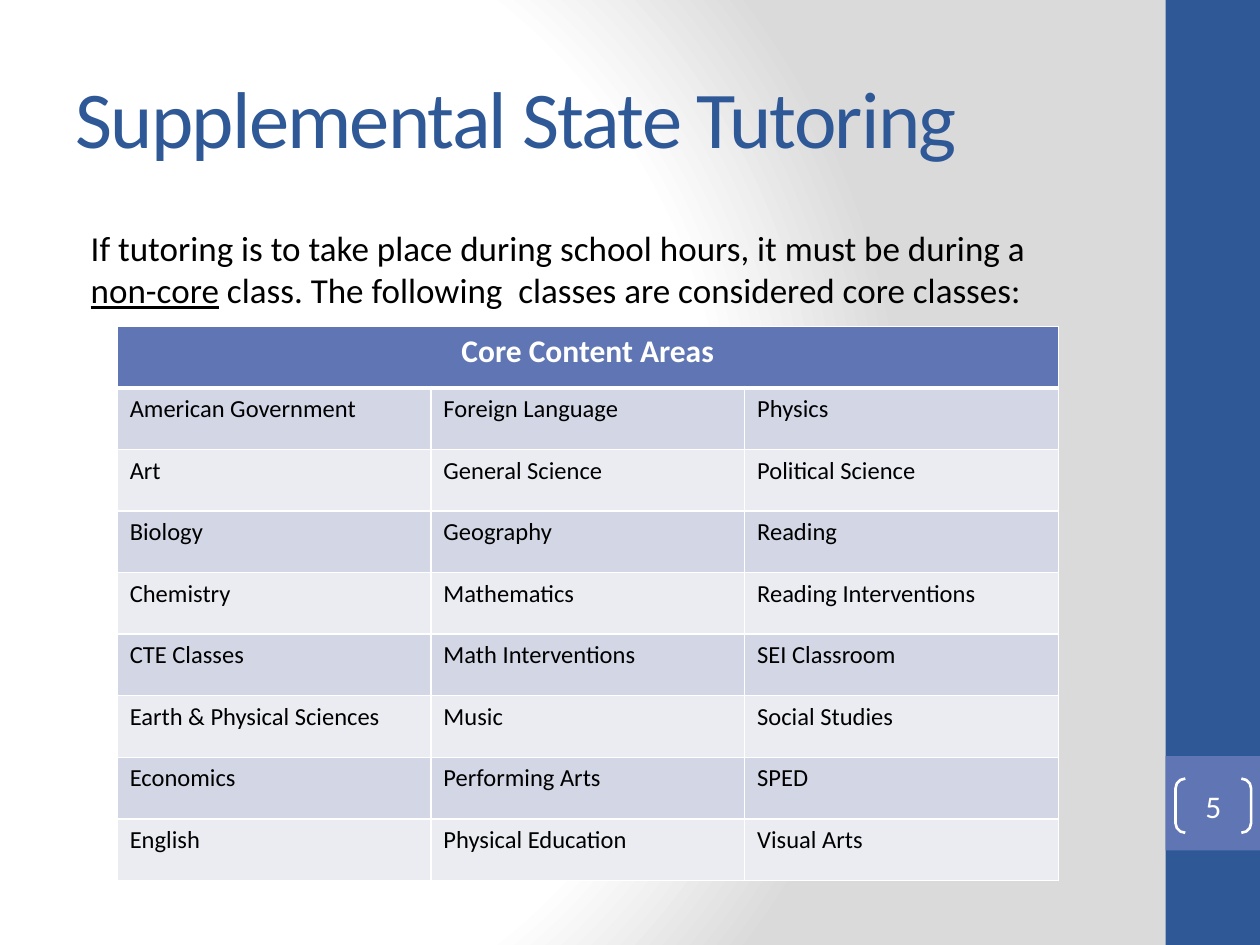
import pptx
import pptx.dml.color
import pptx.enum.shapes
import pptx.enum.text
import pptx.oxml
import pptx.oxml.ns
import pptx.util

COLORS = {"blue": "2F5897", "accent": "6076B4", "white": "FFFFFF", "gray": "DADADA",
          "black": "000000", "odd": "D2D6E5", "even": "EAECF2"}
WIDTH, HEIGHT = 10, 7.5
SIDEBAR = 0.75
FORMATS = {
    "title": {"size": pptx.util.Pt(46), "color": "blue"},
    "body": {"size": pptx.util.Pt(20), "color": "black"},
    "number": {"size": pptx.util.Pt(18), "color": "white"},
    "header": {"size": pptx.util.Pt(18), "color": "white", "bold": True},
    "cell": {"size": pptx.util.Pt(14), "color": "black", "bold": False},
}
HEADER = "Core Content Areas"
CLASSES = [
    ("American Government", "Foreign Language", "Physics"),
    ("Art", "General Science", "Political Science"),
    ("Biology", "Geography", "Reading"),
    ("Chemistry", "Mathematics", "Reading Interventions"),
    ("CTE Classes", "Math Interventions", "SEI Classroom"),
    ("Earth & Physical Sciences", "Music", "Social Studies"),
    ("Economics", "Performing Arts", "SPED"),
    ("English", "Physical Education", "Visual Arts"),
]
ALIGN = pptx.enum.text.PP_ALIGN
ANCHOR = pptx.enum.text.MSO_ANCHOR
SHAPES = pptx.enum.shapes.MSO_SHAPE


def rgb(name):
    """Return the named colour."""
    return pptx.dml.color.RGBColor.from_string(COLORS[name])


def box(*lengths):
    """Convert inches to slide lengths."""
    return [pptx.util.Inches(length) for length in lengths]


def xml(tag, content="", attributes=""):
    """Build one DrawingML element."""
    namespace = pptx.oxml.ns.nsdecls("a")
    return pptx.oxml.parse_xml(f"<a:{tag} {namespace} {attributes}>{content}</a:{tag}>")


def solid(name):
    """Return the colour markup for a named colour."""
    return f'<a:srgbClr val="{COLORS[name]}"/>'


def add_run(paragraph, text, style, **extra):
    """Add a run of text in one of the formats."""
    run = paragraph.add_run()
    run.text = text
    values = {"name": "Calibri", **FORMATS[style], **extra}
    run.font.color.rgb = rgb(values.pop("color"))
    for name, value in values.items():
        setattr(run.font, name, value)


def place(shape, *lengths):
    """Move and size a placeholder."""
    for name, value in zip(("left", "top", "width", "height"), box(*lengths)):
        setattr(shape, name, value)
    shape.text_frame.auto_size = pptx.enum.text.MSO_AUTO_SIZE.NONE


def set_background(slide):
    """Fill the background with a circular gradient."""
    slide.background.fill.gradient()
    gradient = slide.element.find(".//" + pptx.oxml.ns.qn("a:gradFill"))
    for child in list(gradient):
        gradient.remove(child)
    stops = ((0, "white"), (75, "white"), (100, "gray"))
    gradient.append(xml("gsLst", "".join(
        f'<a:gs pos="{share * 1000}">{solid(name)}</a:gs>' for share, name in stops)))
    gradient.append(xml("path", '<a:fillToRect l="20000" t="50000" r="100000" b="50000"/>',
                        'path="circle"'))


def add_block(slide, color, top, height):
    """Add a filled block in the sidebar."""
    block = slide.shapes.add_shape(SHAPES.RECTANGLE,
                                   *box(WIDTH - SIDEBAR, top, SIDEBAR, height))
    block.shadow.inherit = False
    block.fill.solid()
    block.fill.fore_color.rgb = rgb(color)
    block.line.fill.background()


def add_number(slide, text):
    """Add the bracketed slide number."""
    shape = slide.shapes.add_shape(SHAPES.DOUBLE_BRACKET, *box(9.33, 6.18, 0.6, 0.43))
    shape.adjustments[0] = 0.18
    shape.shadow.inherit = False
    shape.fill.background()
    shape.line.color.rgb = rgb("white")
    shape.line.width = pptx.util.Pt(1.5)
    frame = shape.text_frame
    for side in ("left", "top", "right", "bottom"):
        setattr(frame, f"margin_{side}", 0)
    frame.vertical_anchor = ANCHOR.MIDDLE
    frame.paragraphs[0].alignment = ALIGN.CENTER
    add_run(frame.paragraphs[0], text, "number")


def add_title(slide, text):
    """Write the title."""
    title = slide.shapes.title
    place(title, 0.5, 0.3, 8.33, 1.25)
    title.text_frame.vertical_anchor = ANCHOR.MIDDLE
    paragraph = title.text_frame.paragraphs[0]
    paragraph.alignment = ALIGN.LEFT
    add_run(paragraph, text, "title")
    title.element.find(".//" + pptx.oxml.ns.qn("a:rPr")).set("spc", "-100")


def add_body(slide, before, underlined, after):
    """Write the introduction with one underlined term."""
    body = slide.placeholders[1]
    place(body, 0.5, 1.75, 7.9, 4.86)
    paragraph = body.text_frame.paragraphs[0]
    paragraph.space_before = pptx.util.Pt(0)
    properties = body.element.find(".//" + pptx.oxml.ns.qn("a:pPr"))
    properties.set("marL", str(pptx.util.Inches(0.12)))
    properties.set("indent", "0")
    properties.append(xml("buNone"))
    add_run(paragraph, before, "body")
    add_run(paragraph, underlined, "body", underline=True)
    add_run(paragraph, after, "body")


def format_cell(cell, fill, bottom=1):
    """Give a cell white borders and a fill."""
    properties = cell._tc.get_or_add_tcPr()
    for side, width in zip("LRTB", (1, 1, 1, bottom)):
        properties.append(xml(f"ln{side}", f"<a:solidFill>{solid('white')}</a:solidFill>",
                              f'w="{pptx.util.Pt(width)}"'))
    cell.fill.solid()
    cell.fill.fore_color.rgb = rgb(fill)


def add_class_table(slide):
    """Add the table of core classes under a merged header."""
    rows, columns = len(CLASSES) + 1, len(CLASSES[0])
    table = slide.shapes.add_table(rows, columns, *box(0.93, 2.59, 7.47, 4.4)).table
    for column in range(columns):
        format_cell(table.cell(0, column), "accent", 3)
    header = table.cell(0, 0)
    header.merge(table.cell(0, columns - 1))
    paragraph = header.text_frame.paragraphs[0]
    paragraph.alignment = ALIGN.CENTER
    add_run(paragraph, HEADER, "header")
    for row, names in enumerate(CLASSES, 1):
        for column, name in enumerate(names):
            cell = table.cell(row, column)
            format_cell(cell, "odd" if row % 2 else "even")
            add_run(cell.text_frame.paragraphs[0], name, "cell")


def main():
    """Build and save the slide."""
    presentation = pptx.Presentation()
    presentation.slide_width, presentation.slide_height = box(WIDTH, HEIGHT)
    slide = presentation.slides.add_slide(presentation.slide_layouts[1])
    set_background(slide)
    add_block(slide, "blue", 0, HEIGHT)
    add_block(slide, "accent", HEIGHT * 0.8, SIDEBAR)
    add_title(slide, "Supplemental State Tutoring")
    add_body(slide, "If tutoring is to take place during school hours, it must be during a ",
             "non-core", " class. The following  classes are considered core classes:")
    add_number(slide, "5")
    add_class_table(slide)
    presentation.save("out.pptx")


if __name__ == "__main__":
    main()
